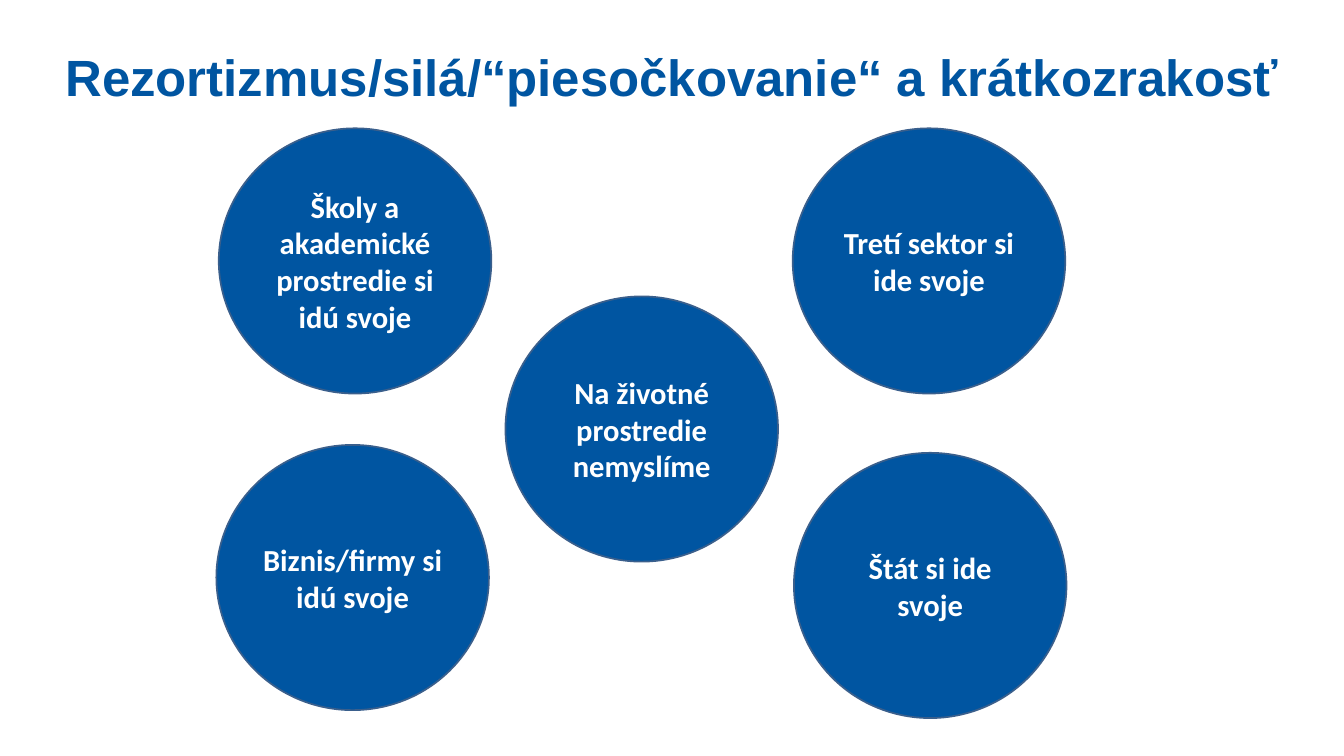
from pptx import Presentation
from pptx import util as u
from pptx.dml.color import RGBColor
from pptx.enum import shapes, text

TITLE = "Rezortizmus/silá/“piesočkovanie“ a krátkozrakosť"
CIRCLES = [
    ("Školy a akademické prostredie si idú svoje", 3.58, 2.1),
    ("Biznis/firmy si idú svoje", 3.54, 7.28),
    ("Tretí sektor si ide svoje", 12.97, 2.1),
    ("Štát si ide svoje", 12.99, 7.41),
    ("Na životné prostredie nemyslíme", 8.27, 4.85),
]
CIRCLE_WIDTH, CIRCLE_HEIGHT = 4.46, 4.34
COLORS = {"blue": "0055A1", "outline": "3A5F8C", "white": "FFFFFF"}


def color(name):
    return RGBColor.from_string(COLORS[name])


def write(shape, wording, font_name, size, color_name, anchor):
    frame = shape.text_frame
    frame.text = wording
    frame.word_wrap = True
    frame.vertical_anchor = anchor
    paragraph = frame.paragraphs[0]
    paragraph.alignment = text.PP_ALIGN.CENTER
    font = paragraph.runs[0].font
    font.name = font_name
    font.size = u.Pt(size)
    font.bold = True
    font.color.rgb = color(color_name)


def add_title(slide):
    title = slide.shapes.title
    title.left, title.top = u.Inches(0.12), u.Inches(0.75)
    title.width, title.height = u.Inches(21.75), u.Inches(1.01)
    write(title, TITLE, "Arial", 60, "blue", text.MSO_ANCHOR.TOP)
    frame = title.text_frame
    frame.margin_left = frame.margin_right = 0
    frame.margin_top = frame.margin_bottom = 0
    frame.auto_size = text.MSO_AUTO_SIZE.SHAPE_TO_FIT_TEXT


def add_circle(slide, wording, left, top):
    circle = slide.shapes.add_shape(
        shapes.MSO_SHAPE.OVAL, u.Inches(left), u.Inches(top),
        u.Inches(CIRCLE_WIDTH), u.Inches(CIRCLE_HEIGHT))
    circle.shadow.inherit = False
    circle.fill.solid()
    circle.fill.fore_color.rgb = color("blue")
    circle.line.color.rgb = color("outline")
    circle.line.width = u.Pt(2)
    write(circle, wording, "Calibri", 36, "white", text.MSO_ANCHOR.MIDDLE)


def main():
    presentation = Presentation()
    presentation.slide_width = u.Inches(21.99)
    presentation.slide_height = u.Inches(12.37)
    slide = presentation.slides.add_slide(presentation.slide_layouts[5])
    add_title(slide)
    for wording, left, top in CIRCLES:
        add_circle(slide, wording, left, top)
    presentation.save("out.pptx")


if __name__ == "__main__":
    main()
